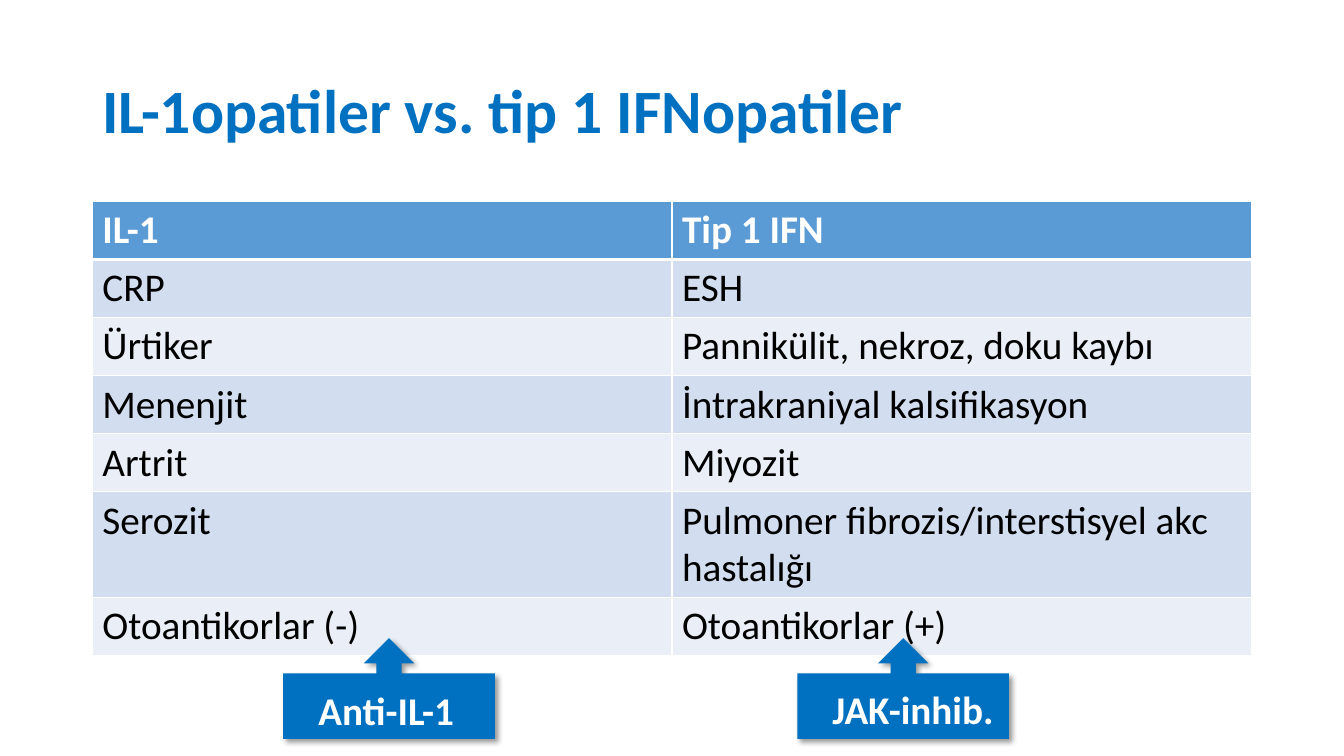
from lxml import etree
from pptx import Presentation
from pptx.dml.color import RGBColor
from pptx.enum.shapes import MSO_SHAPE
from pptx.enum.text import MSO_ANCHOR, MSO_AUTO_SIZE, PP_ALIGN
from pptx.oxml.ns import qn
from pptx.util import Pt

CALLOUT = MSO_SHAPE.DOWN_ARROW_CALLOUT
MIDDLE = MSO_ANCHOR.MIDDLE
NO_FIT, GROW = MSO_AUTO_SIZE.NONE, MSO_AUTO_SIZE.SHAPE_TO_FIT_TEXT
LEFT = PP_ALIGN.LEFT
TITLE_ONLY = 5
FONT = "Calibri"
COLORS = {
    "accent": "0070C0",
    "header": "5B9BD5",
    "odd_row": "D2DEEF",
    "even_row": "EAEFF7",
    "white": "FFFFFF",
    "black": "000000",
}
ROWS = [
    ("IL-1", "Tip 1 IFN"),
    ("CRP", "ESH"),
    ("Ürtiker", "Pannikülit, nekroz, doku kaybı"),
    ("Menenjit", "İntrakraniyal kalsifikasyon"),
    ("Artrit", "Miyozit"),
    ("Serozit", "Pulmoner fibrozis/interstisyel akc hastalığı"),
    ("Otoantikorlar (-)", "Otoantikorlar (+)"),
]
ROW_HEIGHT, TALL_ROW_HEIGHT, TALL_ROW = 29.5, 35.3, 5


def color(name):
    return RGBColor.from_string(COLORS[name])


def format_text(text_frame, size, color_name, bold):
    for paragraph in text_frame.paragraphs:
        for run in paragraph.runs:
            run.font.name = FONT
            run.font.size = Pt(size)
            run.font.bold = bold
            run.font.color.rgb = color(color_name)


def add_title(slide, text, left, top, width, height):
    title = slide.shapes.title
    title.left, title.top, title.width, title.height = map(Pt, (left, top, width, height))
    frame = title.text_frame
    frame.text = text
    frame.auto_size = NO_FIT
    frame.vertical_anchor = MIDDLE
    frame.paragraphs[0].alignment = LEFT
    frame.paragraphs[0].line_spacing = 0.9
    format_text(frame, 44, "accent", True)


def set_borders(cell, top, bottom):
    """Give the cell white borders: 1 pt at the sides, the given widths above and below."""
    properties = cell._tc.get_or_add_tcPr()
    widths = {"a:lnL": 1, "a:lnR": 1, "a:lnT": top, "a:lnB": bottom}
    for position, (tag, width) in enumerate(widths.items()):
        line = etree.Element(qn(tag), w=str(Pt(width)))
        fill = etree.SubElement(line, qn("a:solidFill"))
        etree.SubElement(fill, qn("a:srgbClr"), val=COLORS["white"])
        properties.insert(position, line)


def add_comparison_table(slide, left, top, width, height):
    graphic_frame = slide.shapes.add_table(
        len(ROWS), len(ROWS[0]), Pt(left), Pt(top), Pt(width), Pt(height))
    table = graphic_frame.table
    for row_index, texts in enumerate(ROWS):
        is_header = row_index == 0
        row_height = TALL_ROW_HEIGHT if row_index == TALL_ROW else ROW_HEIGHT
        table.rows[row_index].height = Pt(row_height)
        fill = "header" if is_header else "odd_row" if row_index % 2 else "even_row"
        for column_index, text in enumerate(texts):
            cell = table.cell(row_index, column_index)
            cell.text_frame.text = text
            format_text(cell.text_frame, 28, "white" if is_header else "black", is_header)
            cell.fill.solid()
            cell.fill.fore_color.rgb = color(fill)
            set_borders(cell, 3 if row_index == 1 else 1, 3 if is_header else 1)
    graphic_frame.height = Pt(height)


def add_drop_shadow(shape):
    effects = etree.SubElement(shape._element.spPr, qn("a:effectLst"))
    shadow = etree.SubElement(
        effects, qn("a:outerShdw"), blurRad=str(Pt(4)), dist=str(Pt(3)),
        dir="2700000", algn="tl", rotWithShape="0")
    shade = etree.SubElement(shadow, qn("a:srgbClr"), val=COLORS["black"])
    etree.SubElement(shade, qn("a:alpha"), val="40000")


def add_treatment_arrow(slide, left, top, width, height):
    arrow = slide.shapes.add_shape(CALLOUT, Pt(left), Pt(top), Pt(width), Pt(height))
    arrow.rotation = 180
    arrow.fill.solid()
    arrow.fill.fore_color.rgb = color("accent")
    arrow.line.fill.background()
    add_drop_shadow(arrow)


def add_treatment_label(slide, text, left, top, width, height):
    label = slide.shapes.add_textbox(Pt(left), Pt(top), Pt(width), Pt(height))
    frame = label.text_frame
    frame.text = text
    frame.word_wrap = False
    frame.auto_size = GROW
    format_text(frame, 28, "white", True)


def add_treatments(slide, left, top, width, height):
    treatments = [("Anti-IL-1", 0, 31, 114.5), ("JAK-inhib.", 367.2, 30.2, 138.2)]
    for _, offset, _, _ in treatments:
        add_treatment_arrow(slide, left + offset, top, width, height)
    for text, offset, label_top, label_width in treatments:
        add_treatment_label(slide, text, left + offset + 18, top + label_top, label_width, 41)


def build_comparison_slide(presentation):
    slide = presentation.slides.add_slide(presentation.slide_layouts[TITLE_ONLY])
    add_title(slide, "IL-1opatiler vs. tip 1 IFNopatiler", 66, 28.8, 828, 104.4)
    add_comparison_table(slide, 66, 144, 828, 319)
    add_treatments(slide, 202.3, 455.8, 151.2, 72)


def main():
    presentation = Presentation()
    presentation.slide_width, presentation.slide_height = Pt(960), Pt(540)
    build_comparison_slide(presentation)
    presentation.save("out.pptx")


if __name__ == "__main__":
    main()
